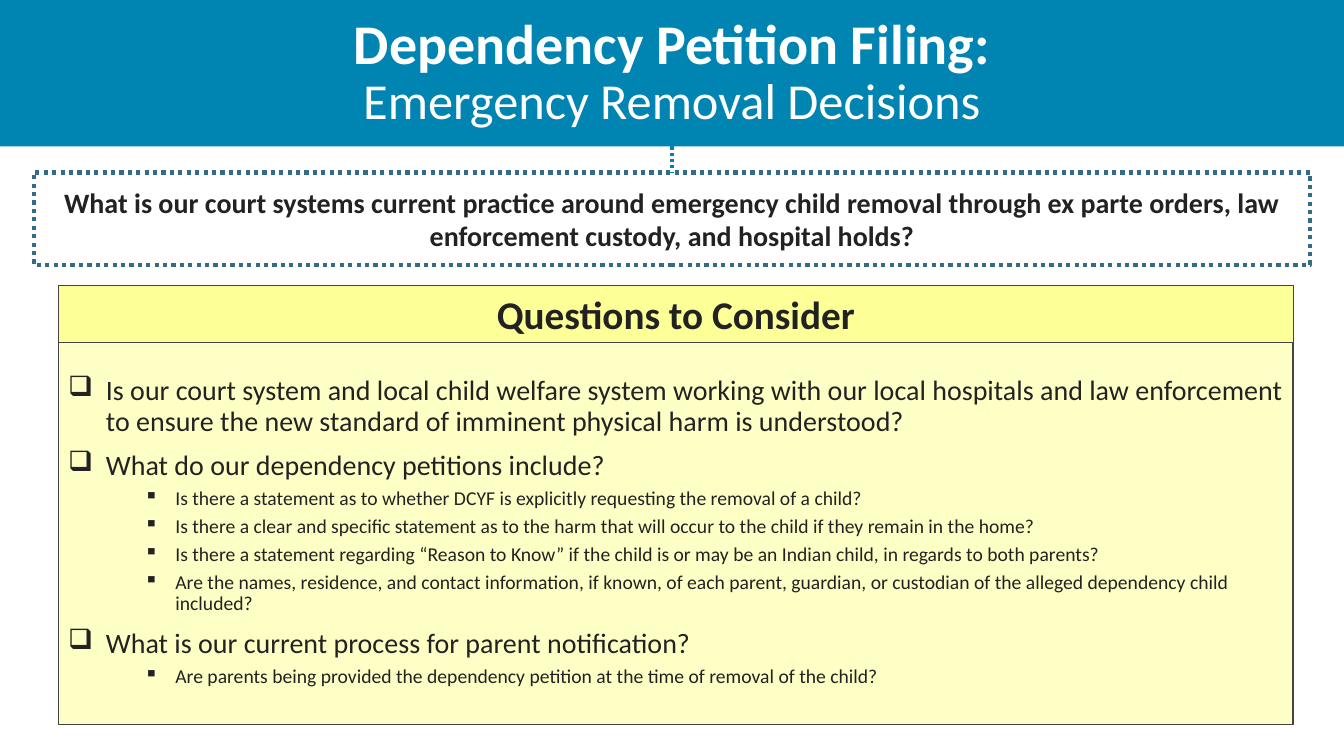
from lxml.etree import SubElement
from pptx import Presentation
from pptx.dml.color import RGBColor
from pptx.enum.dml import MSO_LINE
from pptx.enum.shapes import MSO_CONNECTOR, MSO_SHAPE
from pptx.enum.text import MSO_ANCHOR, PP_ALIGN
from pptx.oxml.ns import qn
from pptx.util import Cm, Pt

THEME = {
    "white": RGBColor.from_string("FFFFFF"),
    "text": RGBColor.from_string("222222"),
    "banner": RGBColor.from_string("0084B1"),
    "connector": RGBColor.from_string("0083B1"),
    "frame": RGBColor.from_string("346C85"),
    "outline": RGBColor.from_string("444444"),
    "heading": RGBColor.from_string("FDFF97"),
    "panel": RGBColor.from_string("FEFFC5"),
    "font": "Calibri",
    "title_size": Pt(40),
    "subtitle_size": Pt(36),
    "heading_size": Pt(28),
    "question_size": Pt(20),
    "detail_size": Pt(14),
}

LEVELS = [
    {"size": "question_size", "bullet": "❑", "margin": Cm(0.95), "hanging": Cm(0.95), "space": Pt(10)},
    {"size": "detail_size", "bullet": "▪", "margin": Cm(2.7), "hanging": Cm(0.79), "space": Pt(5)},
]

QUESTIONS = [
    (0, "Is our court system and local child welfare system working with our local hospitals and law enforcement to ensure the new standard of imminent physical harm is understood?"),
    (0, "What do our dependency petitions include?"),
    (1, "Is there a statement as to whether DCYF is explicitly requesting the removal of a child?"),
    (1, "Is there a clear and specific statement as to the harm that will occur to the child if they remain in the home?"),
    (1, "Is there a statement regarding “Reason to Know” if the child is or may be an Indian child, in regards to both parents?"),
    (1, "Are the names, residence, and contact information, if known, of each parent, guardian, or custodian of the alleged dependency child included?"),
    (0, "What is our current process for parent notification?"),
    (1, "Are parents being provided the dependency petition at the time of removal of the child?"),
]


def add_box(position, fill=None, line=None, width=0):
    shape = slide.shapes.add_shape(MSO_SHAPE.RECTANGLE, *map(Cm, position))
    shape.shadow.inherit = False
    if fill:
        shape.fill.solid()
        shape.fill.fore_color.rgb = THEME[fill]
    else:
        shape.fill.background()
    if line:
        shape.line.color.rgb = THEME[line]
        shape.line.width = Pt(width)
    else:
        shape.line.fill.background()
    shape.text_frame.word_wrap = True
    shape.text_frame.vertical_anchor = MSO_ANCHOR.MIDDLE
    return shape


def add_text(paragraph, text, size, color="text", bold=False):
    run = paragraph.add_run()
    run.text = text
    values = {"name": THEME["font"], "size": THEME[size], "bold": bold}
    for name, value in values.items():
        setattr(run.font, name, value)
    run.font.color.rgb = THEME[color]


presentation = Presentation()
presentation.slide_width = Cm(33.87)
presentation.slide_height = Cm(19.05)
slide = presentation.slides.add_slide(presentation.slide_layouts[6])

frame = add_box((0.85, 4.35, 32.17, 2.32), line="frame", width=3)
frame.line.dash_style = MSO_LINE.ROUND_DOT
banner = add_box((0, 0, 33.87, 3.69), fill="banner")
panel = add_box((1.47, 8.56, 31.12, 9.7), fill="panel", line="outline", width=1)
heading = add_box((1.47, 7.19, 31.12, 1.45), fill="heading", line="outline", width=0.75)

title = banner.text_frame.paragraphs[0]
title.alignment = PP_ALIGN.CENTER
title.line_spacing = 0.9
add_text(title, "Dependency Petition Filing:", "title_size", "white", True)
title.add_line_break()
add_text(title, "Emergency Removal Decisions", "subtitle_size", "white")

for shape, text, size in [
    (frame, "What is our court systems current practice around emergency child removal through ex parte orders, law enforcement custody, and hospital holds?", "question_size"),
    (heading, "Questions to Consider", "heading_size"),
]:
    paragraph = shape.text_frame.paragraphs[0]
    paragraph.alignment = PP_ALIGN.CENTER
    add_text(paragraph, text, size, bold=True)

for index, (level, text) in enumerate(QUESTIONS):
    style = LEVELS[level]
    paragraph = panel.text_frame.add_paragraph() if index else panel.text_frame.paragraphs[0]
    properties = paragraph._p.get_or_add_pPr()
    properties.set("marL", str(style["margin"]))
    properties.set("indent", str(-style["hanging"]))
    SubElement(properties, qn("a:buChar"), char=style["bullet"])
    values = {
        "level": level,
        "alignment": PP_ALIGN.LEFT,
        "line_spacing": 0.9,
        "space_before": style["space"] if index else Pt(0),
    }
    for name, value in values.items():
        setattr(paragraph, name, value)
    add_text(paragraph, text, style["size"])

connector = slide.shapes.add_connector(MSO_CONNECTOR.STRAIGHT, Cm(16.94), Cm(3.69), Cm(16.94), Cm(4.35))
connector.begin_connect(banner, 2)
connector.end_connect(frame, 0)
connector.line.color.rgb = THEME["connector"]
connector.line.width = Pt(2.25)
connector.line.dash_style = MSO_LINE.ROUND_DOT
SubElement(connector._element.spPr, qn("a:effectLst"))

presentation.save("out.pptx")
